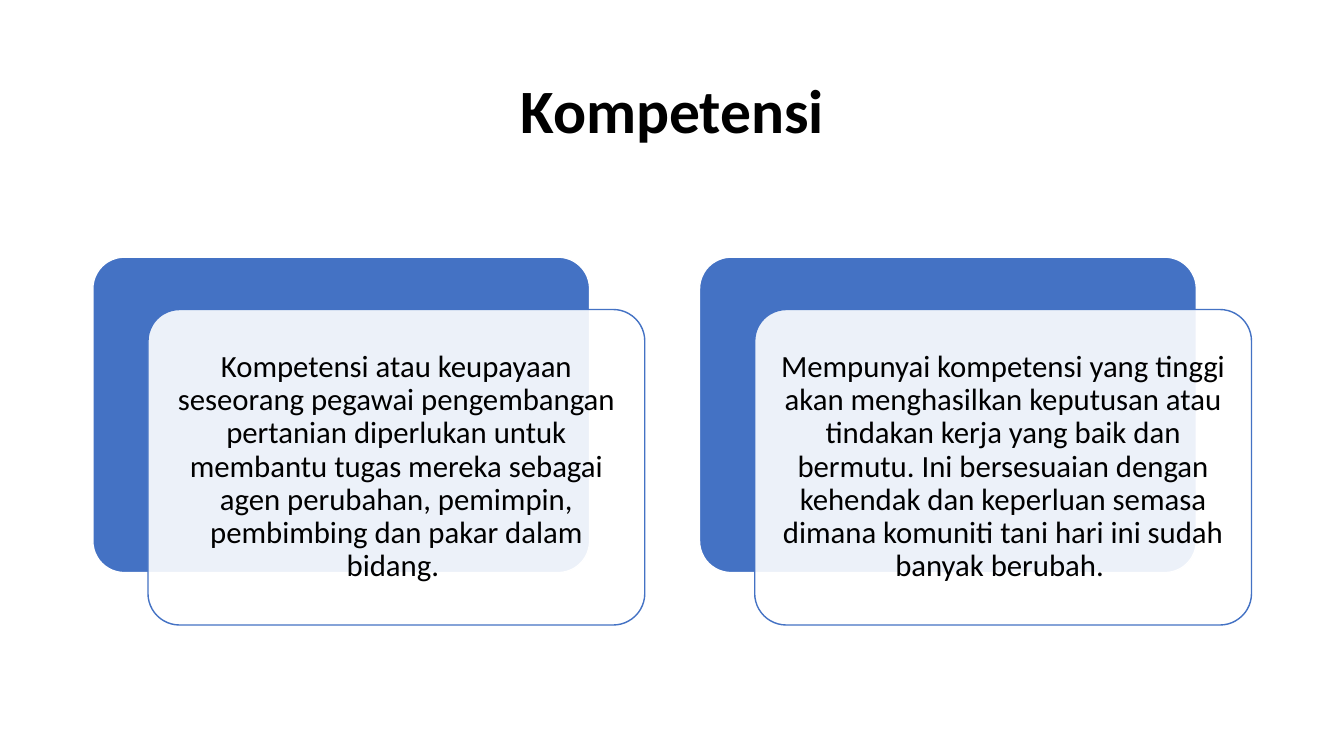
"""Build the "Kompetensi" slide: a title above two layered cards."""
from dataclasses import dataclass

from lxml.etree import SubElement
from pptx import Presentation
from pptx.dml.color import RGBColor
from pptx.enum.shapes import MSO_SHAPE as Preset
from pptx.enum.text import MSO_ANCHOR as Anchor, PP_ALIGN as Align
from pptx.oxml.ns import qn
from pptx.util import Cm, Pt


@dataclass(frozen=True)
class Theme:
    font: str = "Calibri"
    ink: RGBColor = RGBColor(0x00, 0x00, 0x00)
    accent: RGBColor = RGBColor(0x44, 0x72, 0xC4)
    paper: RGBColor = RGBColor(0xFF, 0xFF, 0xFF)
    title_size: int = 44
    card_size: int = 22


theme = Theme()


def write(shape, text, *, size, bold=False, inset=0.25):
    frame = shape.text_frame
    frame.word_wrap = True
    frame.vertical_anchor = Anchor.MIDDLE
    frame.margin_left = frame.margin_right = Cm(inset)
    frame.margin_top = frame.margin_bottom = Cm(inset)
    paragraph = frame.paragraphs[0]
    paragraph.alignment = Align.CENTER
    paragraph.line_spacing = 0.9
    run = paragraph.add_run()
    run.text = text
    run.font.name = theme.font
    run.font.size = Pt(size)
    run.font.bold = bold
    run.font.color.rgb = theme.ink


def add_panel(left, top, *, fill, line):
    panel = slide.shapes.add_shape(
        Preset.ROUNDED_RECTANGLE, Cm(left), Cm(top), Cm(12.52), Cm(7.95))
    panel.adjustments[0] = 0.1
    panel.shadow.inherit = False
    panel.fill.solid()
    panel.fill.fore_color.rgb = fill
    panel.line.color.rgb = line
    panel.line.width = Pt(1)
    return panel


deck = Presentation()
deck.slide_width, deck.slide_height = Cm(33.87), Cm(19.05)
slide = deck.slides.add_slide(deck.slide_layouts[5])

heading = slide.shapes.title
heading.left, heading.top = Cm(2.34), Cm(1.02)
heading.width, heading.height = Cm(29.21), Cm(3.68)
write(heading, "Kompetensi", size=theme.title_size, bold=True)

competencies = [
    "Kompetensi atau keupayaan seseorang pegawai pengembangan pertanian "
    "diperlukan untuk membantu tugas mereka sebagai agen perubahan, pemimpin, "
    "pembimbing dan pakar dalam bidang. ",
    "Mempunyai kompetensi yang tinggi akan menghasilkan keputusan atau tindakan "
    "kerja yang baik dan bermutu. Ini bersesuaian dengan kehendak dan keperluan "
    "semasa dimana komuniti tani hari ini sudah banyak berubah. ",
]
card_left, card_top, card_pitch = 2.34, 6.48, 15.29
front_shift, front_drop = 1.39, 1.32

for column, competency in enumerate(competencies):
    left = card_left + column * card_pitch
    add_panel(left, card_top, fill=theme.accent, line=theme.paper)
    front = add_panel(left + front_shift, card_top + front_drop,
                      fill=theme.paper, line=theme.accent)
    front_color = front.fill._xPr.find(qn("a:solidFill"))[0]
    SubElement(front_color, qn("a:alpha"), val="90000")
    write(front, competency, size=theme.card_size, inset=0.23)

deck.save("out.pptx")
